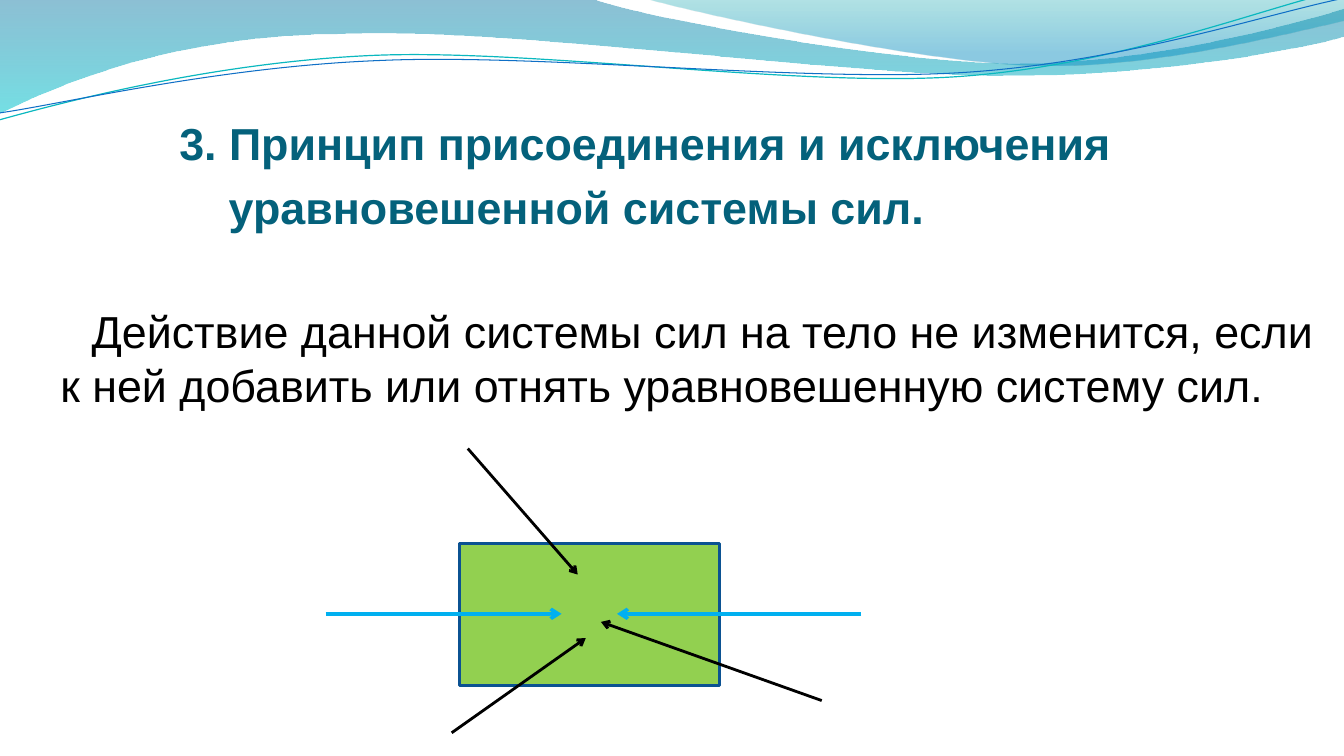
from lxml import etree
from pptx import Presentation
from pptx.dml.color import RGBColor
from pptx.enum import shapes
from pptx.oxml.ns import qn
from pptx.util import Inches, Pt


def rgb(value):
    return RGBColor.from_string(value)


def add_wave(start, segments, close):
    """Draw an outline of segments: one point is a line, three are a cubic curve."""
    anchors = [start] + [segment[-1] for segment in segments]
    left, top = (min(axis) for axis in zip(*anchors))
    builder = s.shapes.build_freeform(*map(Inches, start))
    builder.add_line_segments([tuple(map(Inches, a)) for a in anchors[1:]], close=close)
    sp = builder.convert_to_shape()
    sp.shadow.inherit = False
    for line, segment in zip(list(sp._element.iter(qn("a:lnTo"))), segments):
        if len(segment) == 3:
            curve = etree.Element(qn("a:cubicBezTo"))
            for x, y in segment:
                etree.SubElement(curve, qn("a:pt"), x=str(Inches(x) - Inches(left)),
                                 y=str(Inches(y) - Inches(top)))
            line.getparent().replace(line, curve)
    return sp


prs = Presentation()
prs.slide_width, prs.slide_height = Inches(13.33), Inches(7.5)
s = prs.slides.add_slide(prs.slide_layouts[6])

# Bands: start, segments, gradient stops (position, colour, opacity %)
bands = [
    ((0, -0.01),
     [[(5.87, -0.01)],
      [(6.34, 0.17), (8.85, 0.63), (10.11, 0.63)],
      [(11.38, 0.63), (12.78, 0.26), (13.33, 0.09)],
      [(13.35, 0.36)],
      [(13.11, 0.44), (11.6, 0.76), (9.94, 0.75)],
      [(8.29, 0.75), (5.09, 0.28), (3.43, 0.34)],
      [(1.72, 0.35), (0.61, 0.83), (-0.01, 1.13)],
      [(0, -0.01)]],
     [(0, "0074A1", 45), (1, "00C6CF", 55)]),
    ((6.39, -0.01),
     [[(6.79, 0.11), (9.09, 0.62), (10.25, 0.65)],
      [(11.41, 0.69), (12.82, 0.32), (13.33, 0.21)],
      [(13.33, 0)],
      [(6.39, -0.01)]],
     [(0, "00A1A9", 30), (0.8, "008BBF", 45)]),
]
for start, segments, stops in bands:
    band = add_wave(start, segments, True)
    band.line.fill.background()
    band.fill.gradient()
    band.fill.gradient_angle = 270
    for stop, (position, color, _) in zip(band.fill.gradient_stops, stops):
        stop.position = position
        stop.color.rgb = rgb(color)
    for clr, (_, _, opacity) in zip(band._element.spPr.iter(qn("a:srgbClr")), stops):
        etree.SubElement(clr, qn("a:alpha"), val=str(opacity * 1000))

# Thin wave lines: start, segments, colour, width
wave_lines = [
    ((-0.01, 1.19),
     [[(0.64, 1.01), (2.11, 0.62), (3.69, 0.55)],
      [(5.27, 0.48), (7.9, 0.87), (9.5, 0.76)],
      [(11.1, 0.65), (12.52, 0.08), (13.31, -0.1)]], "0AB8BF", 0.85),
    ((0, 1.12),
     [[(0.63, 1.03), (2.18, 0.66), (3.78, 0.6)],
      [(5.37, 0.53), (7.96, 0.82), (9.55, 0.72)],
      [(11.15, 0.62), (12.55, 0.14), (13.34, -0.02)]], "0F6FC6", 0.75),
]
for start, segments, color, width in wave_lines:
    wave = add_wave(start, segments, False)
    wave.fill.background()
    wave.line.color.rgb = rgb(color)
    wave.line.width = Pt(width)

# Text: wording, left margin, first-line indent, space before, colour, bold
paragraphs = [
    ("3. Принцип присоединения и исключения", 1.48, 0, 0, "04617B", True),
    ("уравновешенной системы сил.", 1.97, 0, 7, "04617B", True),
    ("Действие данной системы сил на тело не изменится, если к ней добавить "
     "или отнять уравновешенную систему сил.", 0.3, 0.31, 50.5, "000000", False),
]
tf = s.shapes.add_textbox(Inches(0.2), Inches(1.1), Inches(13.14), Inches(4.8)).text_frame
tf.word_wrap = True
for i, (wording, margin, indent, before, color, bold) in enumerate(paragraphs):
    p = tf.paragraphs[0] if i == 0 else tf.add_paragraph()
    p.text = wording
    p.space_before = Pt(before)
    p.font.name, p.font.size, p.font.bold = "Arial", Pt(32), bold
    p.font.color.rgb = rgb(color)
    pPr = p._p.get_or_add_pPr()
    pPr.set("marL", str(Inches(margin)))
    pPr.set("indent", str(Inches(indent)))

body = s.shapes.add_shape(shapes.MSO_SHAPE.RECTANGLE, Inches(4.56), Inches(5.39),
                          Inches(2.58), Inches(1.41))
body.shadow.inherit = False
body.fill.solid()
body.fill.fore_color.rgb = rgb("92D050")
body.line.color.rgb = rgb("0B5292")
body.line.width = Pt(2)

# Forces: from, to, colour, width
forces = [
    (3.23, 6.09, 5.57, 6.09, "00B0F0", 2.5),
    (8.54, 6.09, 6.12, 6.09, "00B0F0", 2.5),
    (4.64, 4.45, 5.73, 5.7, "000000", 2),
    (4.48, 7.27, 5.81, 6.33, "000000", 2),
    (8.15, 6.95, 5.96, 6.17, "000000", 2),
]
for *ends, color, width in forces:
    force = s.shapes.add_connector(shapes.MSO_CONNECTOR.STRAIGHT, *map(Inches, ends))
    force.line.color.rgb = rgb(color)
    force.line.width = Pt(width)
    spPr = force._element.spPr
    etree.SubElement(spPr.find(qn("a:ln")), qn("a:tailEnd"), type="arrow")
    etree.SubElement(spPr, qn("a:effectLst"))

prs.save("out.pptx")
